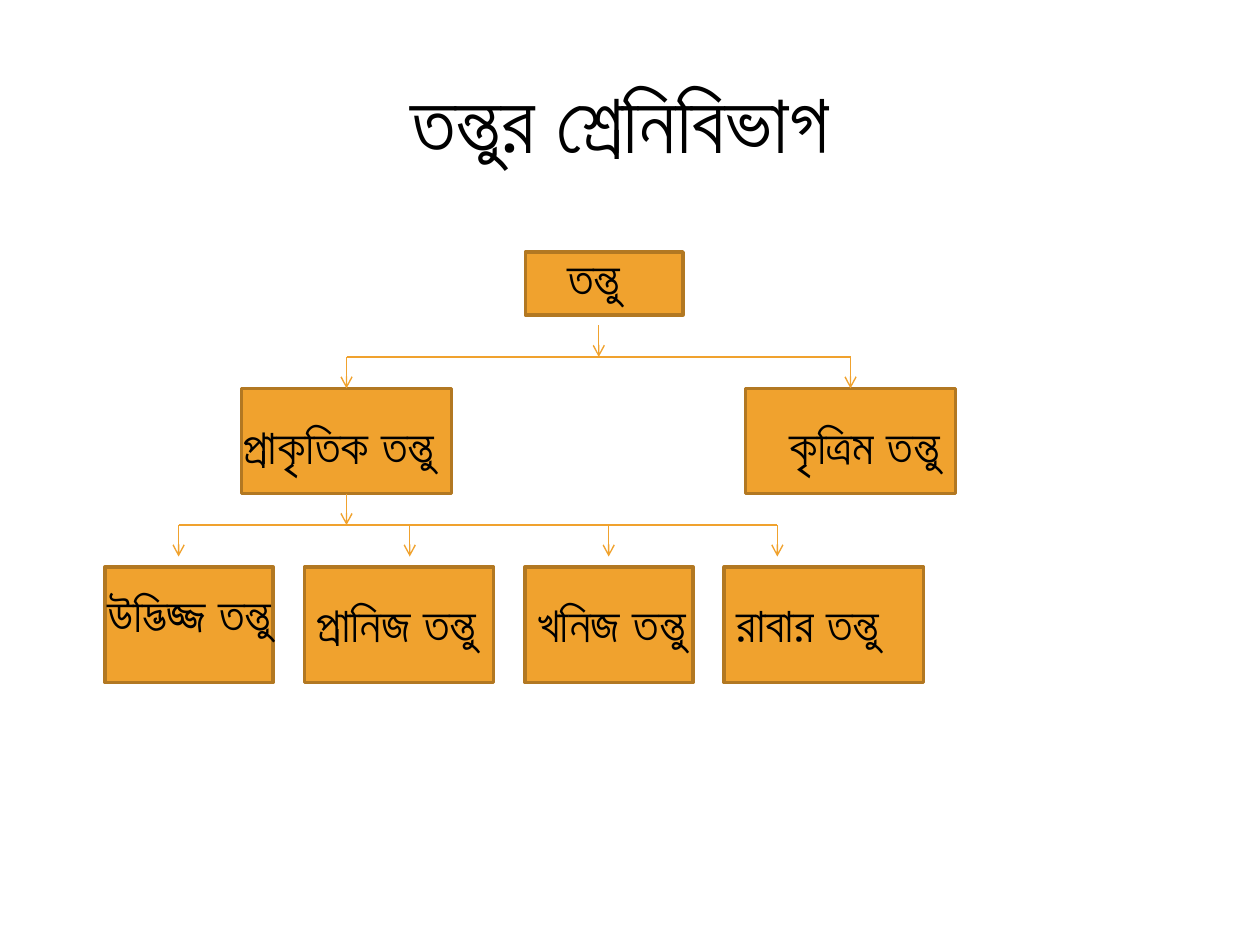
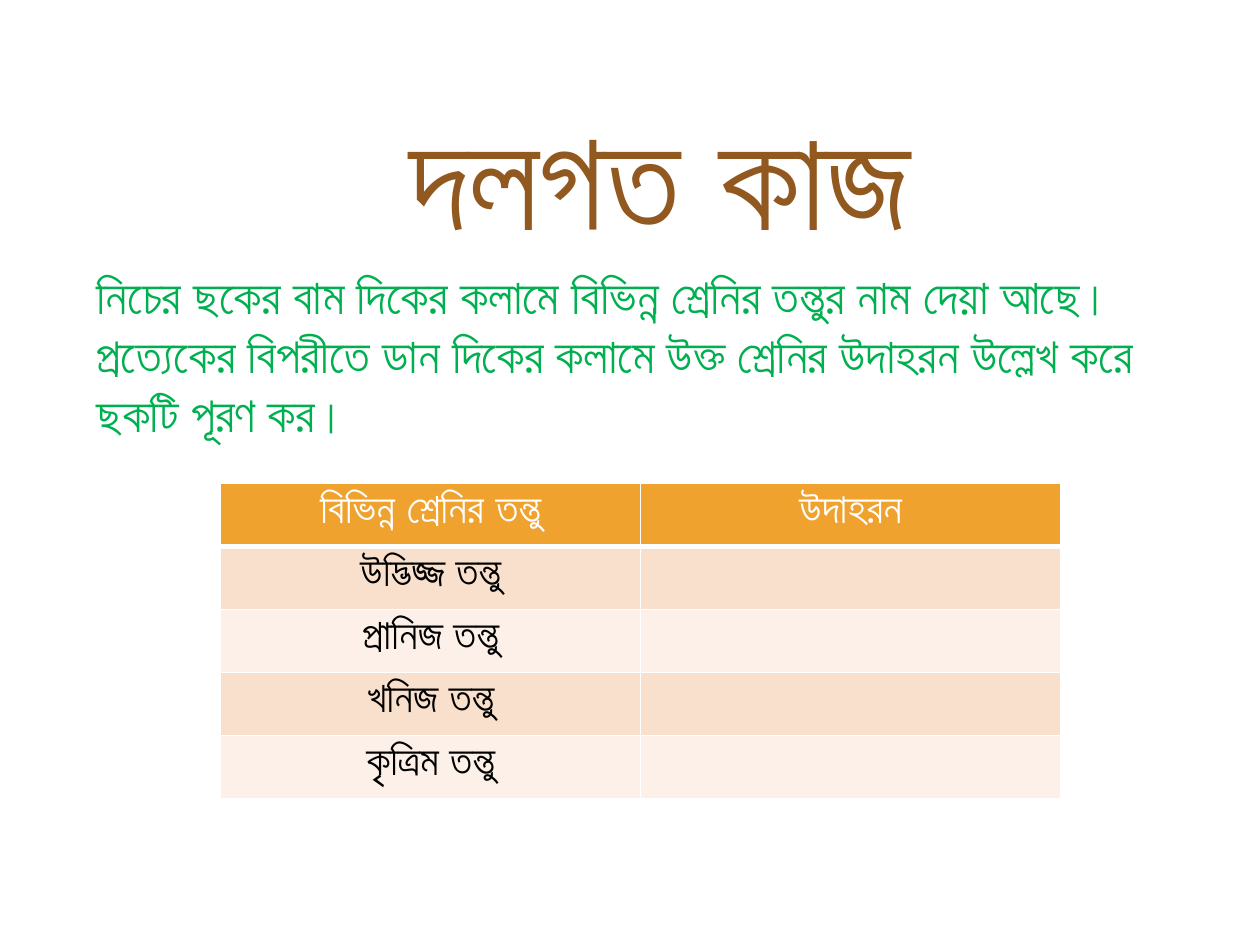
from dataclasses import dataclass

from lxml import etree
from pptx import Presentation
from pptx.dml.color import RGBColor
from pptx.enum import shapes, text
from pptx.oxml import ns
from pptx.util import Cm, Pt


@dataclass(frozen=True)
class Theme:
    font: str = "Calibri"
    black: str = "000000"
    white: str = "FFFFFF"
    orange: str = "F0A22E"
    orange_dark: str = "B27822"
    brown: str = "91581F"
    green: str = "00B050"
    bands: tuple = ("F9E0CD", "FCF0E8")
    title: int = 48
    banner: int = 80
    body: int = 28
    table: int = 24


@dataclass(frozen=True)
class Box:
    left: float
    top: float
    width: float
    height: float

    def inner(self, left, top, width, height):
        """Return a box given relative to this one."""
        return Box(self.left + left, self.top + top, width, height)

    def lengths(self):
        return Cm(self.left), Cm(self.top), Cm(self.width), Cm(self.height)


@dataclass(frozen=True)
class Node:
    caption: str
    left: float
    top: float
    width: float
    height: float
    label: tuple  # left and top offsets from the node, and width
    centred: bool = False


THEME = Theme()
LABEL_HEIGHT = 1.45
ARROW_LENGTH = 0.635
LEAF_GAP = 0.63

FIBRE = "তন্তু"
NATURAL = "প্রাকৃতিক তন্তু"
SYNTHETIC = "কৃত্রিম তন্তু"
PLANT = "উদ্ভিজ্জ তন্তু"
ANIMAL = "প্রানিজ তন্তু"
MINERAL = "খনিজ তন্তু"
RUBBER = "রাবার তন্তু"

UPPER_NODES = [
    Node(FIBRE, 8.47, 0, 3.18, 1.27, (-0.21, -0.21, 3.18), centred=True),
    Node(NATURAL, 2.75, 2.75, 4.23, 2.12, (-0.21, 0.42, 5.29)),
    Node(SYNTHETIC, 12.91, 2.75, 4.23, 2.12, (0.64, 0.42, 3.6)),
]
LEAVES = [  # caption, width, label
    (PLANT, 3.39, (-0.21, 0.21, 4.45)),
    (ANIMAL, 3.81, (0, 0.42, 4.45)),
    (MINERAL, 3.39, (0, 0.42, 3.6)),
    (RUBBER, 4.02, (0, 0.42, 3.6)),
]


def style_paragraph(paragraph, size, color, bold=False, centred=False):
    paragraph.alignment = text.PP_ALIGN.CENTER if centred else text.PP_ALIGN.LEFT
    font = paragraph.font
    font.name, font.size, font.bold = THEME.font, Pt(size), bold
    font.color.rgb = RGBColor.from_string(color)


def fill_frame(frame, wording, size, color, wrap=True, **style):
    frame.text = wording
    frame.word_wrap = wrap
    frame.auto_size = text.MSO_AUTO_SIZE.SHAPE_TO_FIT_TEXT
    frame.vertical_anchor = text.MSO_ANCHOR.TOP
    style_paragraph(frame.paragraphs[0], size, color, **style)


def add_titled_slide(presentation, box, wording, size, color, **style):
    slide = presentation.slides.add_slide(presentation.slide_layouts[5])
    title = slide.shapes.title
    title.left, title.top, title.width, title.height = box.lengths()
    fill_frame(title.text_frame, wording, size, color, centred=True, **style)
    return slide


def add_text(slide, box, wording, color, **style):
    frame = slide.shapes.add_textbox(*box.lengths()).text_frame
    fill_frame(frame, wording, THEME.body, color, **style)


def add_node(slide, box, node):
    outline = box.inner(node.left, node.top, node.width, node.height)
    shape = slide.shapes.add_shape(shapes.MSO_SHAPE.RECTANGLE, *outline.lengths())
    shape.shadow.inherit = False
    shape.fill.solid()
    shape.fill.fore_color.rgb = RGBColor.from_string(THEME.orange)
    shape.line.color.rgb = RGBColor.from_string(THEME.orange_dark)
    shape.line.width = Pt(2)
    add_text(slide, outline.inner(*node.label, LABEL_HEIGHT), node.caption,
             THEME.black, centred=node.centred)


def add_line(slide, box, start, end, arrow=True):
    ends = [Cm(origin + offset) for point in (start, end)
            for origin, offset in zip((box.left, box.top), point)]
    line = slide.shapes.add_connector(shapes.MSO_CONNECTOR.STRAIGHT, *ends)
    line.line.color.rgb = RGBColor.from_string(THEME.orange)
    line.line.width = Pt(0.79)
    if arrow:
        etree.SubElement(line.line._get_or_add_ln(), ns.qn("a:tailEnd"), type="arrow")
    etree.SubElement(line._element.spPr, ns.qn("a:effectLst"))


def add_branch(slide, box, stem, drops):
    """Draw an arrow down from stem to a rail, and an arrow down from it at each drop."""
    left, top = stem
    rail = top + ARROW_LENGTH
    add_line(slide, box, stem, (left, rail))
    add_line(slide, box, (drops[0], rail), (drops[-1], rail), arrow=False)
    for drop in drops:
        add_line(slide, box, (drop, rail), (drop, rail + ARROW_LENGTH))


def add_fibre_tree(slide, box):
    nodes = list(UPPER_NODES)
    left = 0
    for caption, width, label in LEAVES:
        nodes.append(Node(caption, left, 6.35, width, 2.33, label))
        left += width + LEAF_GAP
    for node in nodes:
        add_node(slide, box, node)
    natural, synthetic = (node.left + node.width / 2 for node in UPPER_NODES[1:])
    add_branch(slide, box, (9.95, 1.48), [natural, synthetic])
    add_branch(slide, box, (natural, 4.87), [1.48, 6.14, 10.15, 13.55])


def set_borders(cell, is_header, below_header):
    properties = cell._tc.get_or_add_tcPr()
    widths = {"L": 1, "R": 1, "T": 3 if below_header else 1, "B": 3 if is_header else 1}
    for position, (side, width) in enumerate(widths.items()):
        line = etree.Element(ns.qn(f"a:ln{side}"), w=str(Pt(width)))
        fill = etree.SubElement(line, ns.qn("a:solidFill"))
        etree.SubElement(fill, ns.qn("a:srgbClr"), val=THEME.white)
        properties.insert(position, line)


def add_example_table(slide, box, headings, fibres):
    rows = [headings] + [(fibre, "") for fibre in fibres]
    table = slide.shapes.add_table(len(rows), len(headings), *box.lengths()).table
    for row, wordings in enumerate(rows):
        is_header = row == 0
        for column, wording in enumerate(wordings):
            cell = table.cell(row, column)
            cell.text = wording
            style_paragraph(cell.text_frame.paragraphs[0], THEME.table,
                            THEME.white if is_header else THEME.black,
                            bold=is_header, centred=True)
            color = THEME.orange if is_header else THEME.bands[(row - 1) % 2]
            cell.fill.solid()
            cell.fill.fore_color.rgb = RGBColor.from_string(color)
            set_borders(cell, is_header, row == 1)


def add_classification_slide(presentation):
    slide = add_titled_slide(presentation, Box(4.23, 1.27, 16.51, 2.31),
                             "তন্তুর শ্রেনিবিভাগ", THEME.title, THEME.black)
    add_fibre_tree(slide, Box(2.12, 5.08, 17.14, 8.68))


def add_group_work_slide(presentation):
    slide = add_titled_slide(presentation, Box(7.82, 1.7, 10.97, 3.68), "দলগত কাজ",
                             THEME.banner, THEME.brown, bold=True, wrap=False)
    add_text(slide, Box(1.7, 5.23, 22.66, 3.84),
             "নিচের ছকের বাম দিকের কলামে বিভিন্ন শ্রেনির তন্তুর নাম দেয়া আছে। "
             "প্রত্যেকের বিপরীতে ডান দিকের কলামে উক্ত শ্রেনির উদাহরন উল্লেখ করে "
             "ছকটি পূরণ কর।", THEME.green)
    add_example_table(slide, Box(4.45, 9.74, 16.93, 6.35),
                      ("বিভিন্ন শ্রেনির তন্তু", "উদাহরন"),
                      (PLANT, ANIMAL, MINERAL, SYNTHETIC))


def main():
    presentation = Presentation()
    presentation.slide_width, presentation.slide_height = Cm(25.4), Cm(19.05)
    add_classification_slide(presentation)
    add_group_work_slide(presentation)
    presentation.save("out.pptx")


if __name__ == "__main__":
    main()
